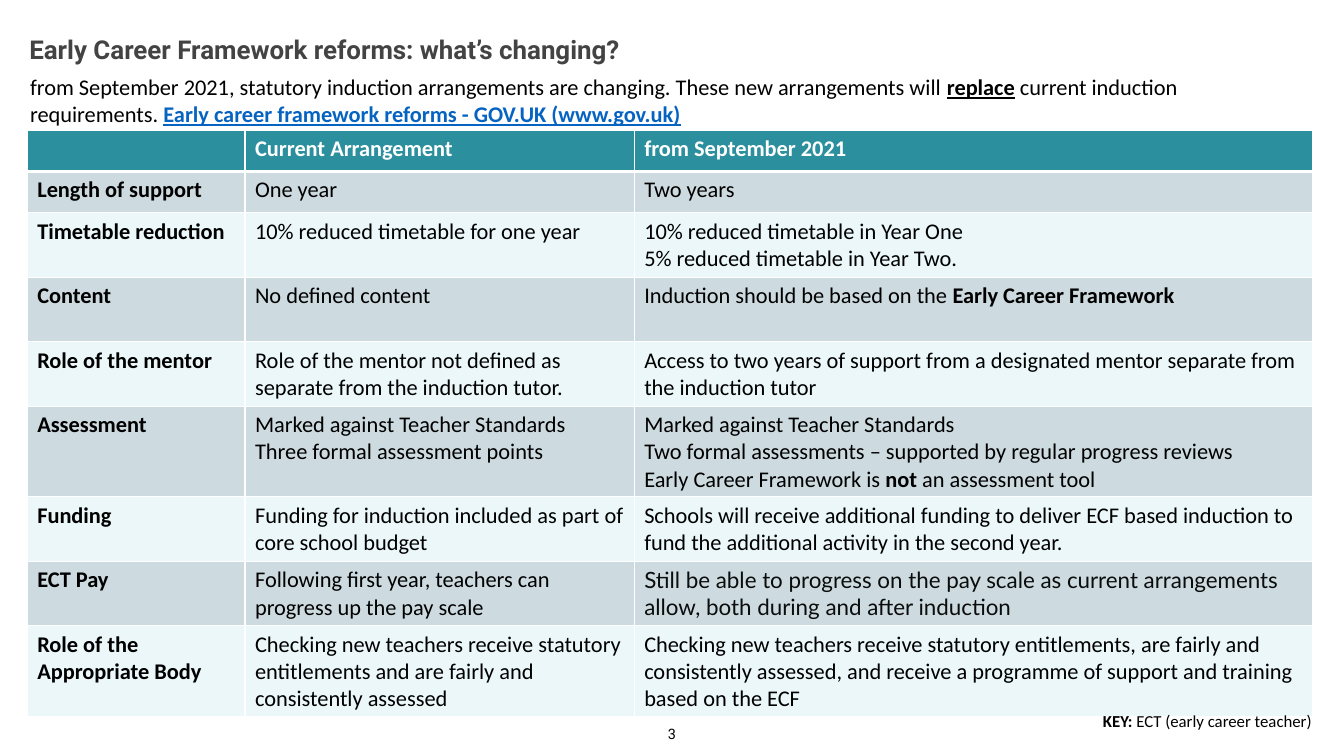
from pptx import Presentation
from pptx import util as u
from pptx.dml.color import RGBColor
from pptx.enum import text
from pptx.oxml import parse_xml
from pptx.oxml.ns import nsdecls


def hue(code):
    return RGBColor.from_string(code)


class Deck:
    """Hold the slide and its text and table style."""

    face, ink, size = "Calibri", "000000", 16
    head, bands = "2B8F9D", ("EBF7F9", "CDDBE0")

    def __init__(self):
        self.file = Presentation()
        self.file.slide_width = u.Inches(13.33)
        self.file.slide_height = u.Inches(7.5)
        self.slide = self.file.slides.add_slide(self.file.slide_layouts[6])

    def words(self, para, line, size=None, face=None, ink=None, bold=False):
        font = para.font
        font.size = u.Pt(size or self.size)
        font.name = face or self.face
        font.color.rgb = hue(ink or self.ink)
        if "*" not in line:
            font.bold = bold
        for i, part in enumerate(line.split("*")):
            if part:
                run = para.add_run()
                run.text = part
                if "*" in line:
                    run.font.bold = i % 2 == 1

    def label(self, box, line, pad=(0.1, 0.05), mid=False, **style):
        frame = self.slide.shapes.add_textbox(*map(u.Inches, box)).text_frame
        frame.word_wrap = True
        frame.margin_left = frame.margin_right = u.Inches(pad[0])
        frame.margin_top = frame.margin_bottom = u.Inches(pad[1])
        if mid:
            frame.vertical_anchor = text.MSO_ANCHOR.MIDDLE
        para = frame.paragraphs[0]
        self.words(para, line, **style)
        return para

    def edge(self, cell, top):
        for side in "LRTB":
            wide = u.Pt(3 if top and side == "B" else 1)
            cell._tc.get_or_add_tcPr().append(parse_xml(
                f'<a:ln{side} {nsdecls("a")} w="{wide}"><a:solidFill>'
                f'<a:srgbClr val="FFFFFF"/></a:solidFill></a:ln{side}>'))

    def grid(self, box, cols, rows, data, odd):
        table = self.slide.shapes.add_table(
            len(rows), len(cols), *map(u.Inches, box)).table
        for col, wide in zip(table.columns, cols):
            col.width = u.Inches(wide)
        for row, high in zip(table.rows, rows):
            row.height = u.Inches(high)
        for r, line in enumerate(data):
            for c, entry in enumerate(line):
                cell = table.cell(r, c)
                self.edge(cell, r == 0)
                cell.fill.solid()
                cell.fill.fore_color.rgb = hue(
                    self.bands[r % 2] if r else self.head)
                style = dict(bold=r == 0 or c == 0,
                             ink=self.ink if r else "FFFFFF")
                style.update(odd.get((r, c), {}))
                for i, part in enumerate(entry.split("\n")):
                    frame = cell.text_frame
                    para = frame.add_paragraph() if i else frame.paragraphs[0]
                    self.words(para, part, **style)


ROWS = [
    ("", "Current Arrangement", "from September 2021"),
    ("Length of support", "One year", "Two years"),
    ("Timetable reduction", "10% reduced timetable for one year",
     "10% reduced timetable in Year One\n5% reduced timetable in Year Two."),
    ("Content", "No defined content",
     "Induction should be based on the *Early Career Framework*"),
    ("Role of the mentor",
     "Role of the mentor not defined as separate from the induction tutor.",
     "Access to two years of support from a designated mentor separate from "
     "the induction tutor"),
    ("Assessment",
     "Marked against Teacher Standards\nThree formal assessment points",
     "Marked against Teacher Standards\n"
     "Two formal assessments – supported by regular progress reviews\n"
     "Early Career Framework is *not *an assessment tool"),
    ("Funding",
     "Funding for induction included as part of core school budget",
     "Schools will receive additional funding to deliver ECF based induction "
     "to fund the additional activity in the second year."),
    ("ECT Pay",
     "Following first year, teachers can progress up the pay scale",
     "Still be able to progress on the pay scale as current arrangements "
     "allow, both during and after induction"),
    ("Role of the Appropriate Body",
     "Checking new teachers receive statutory entitlements and are fairly and "
     "consistently assessed",
     "Checking new teachers receive statutory entitlements, are fairly and "
     "consistently assessed, and receive a programme of support and training "
     "based on the ECF"),
]


def main():
    deck = Deck()
    page = deck.label((6.54, 7.15, 0.25, 0.21), "3", pad=(0.04, 0.04),
                      size=10.3, face="Roboto")
    page.alignment = text.PP_ALIGN.CENTER

    intro = deck.label(
        (0.2, 0.68, 12.75, 0.94),
        "from September 2021, statutory induction arrangements are changing. "
        "These new arrangements will *replace* current induction requirements. "
        "*Early career framework reforms - GOV.UK (www.gov.uk)*")
    for run in intro.runs[1::2]:
        run.font.underline = True
    intro.runs[-1].font.color.rgb = hue("0563C1")

    one, two, three = 0.41, 0.64, 0.9
    deck.grid((0.27, 1.29, 12.75, 5.79), (2.16, 3.86, 6.73),
              (one, one, two, two, two, three, two, two, three), ROWS,
              {(7, 2): dict(face="Lato", ink="0B0C0C")})

    title = deck.label((0.29, 0.28, 9.09, 0.36),
                       "Early Career Framework reforms: what’s changing?",
                       pad=(0, 0), mid=True, size=18.5, face="Roboto",
                       ink="434343", bold=True)
    title.line_spacing = 1.15
    deck.label((10.84, 7, 2.61, 0.3), "*KEY: *ECT (early career teacher)",
               size=12)
    deck.file.save("out.pptx")


if __name__ == "__main__":
    main()
